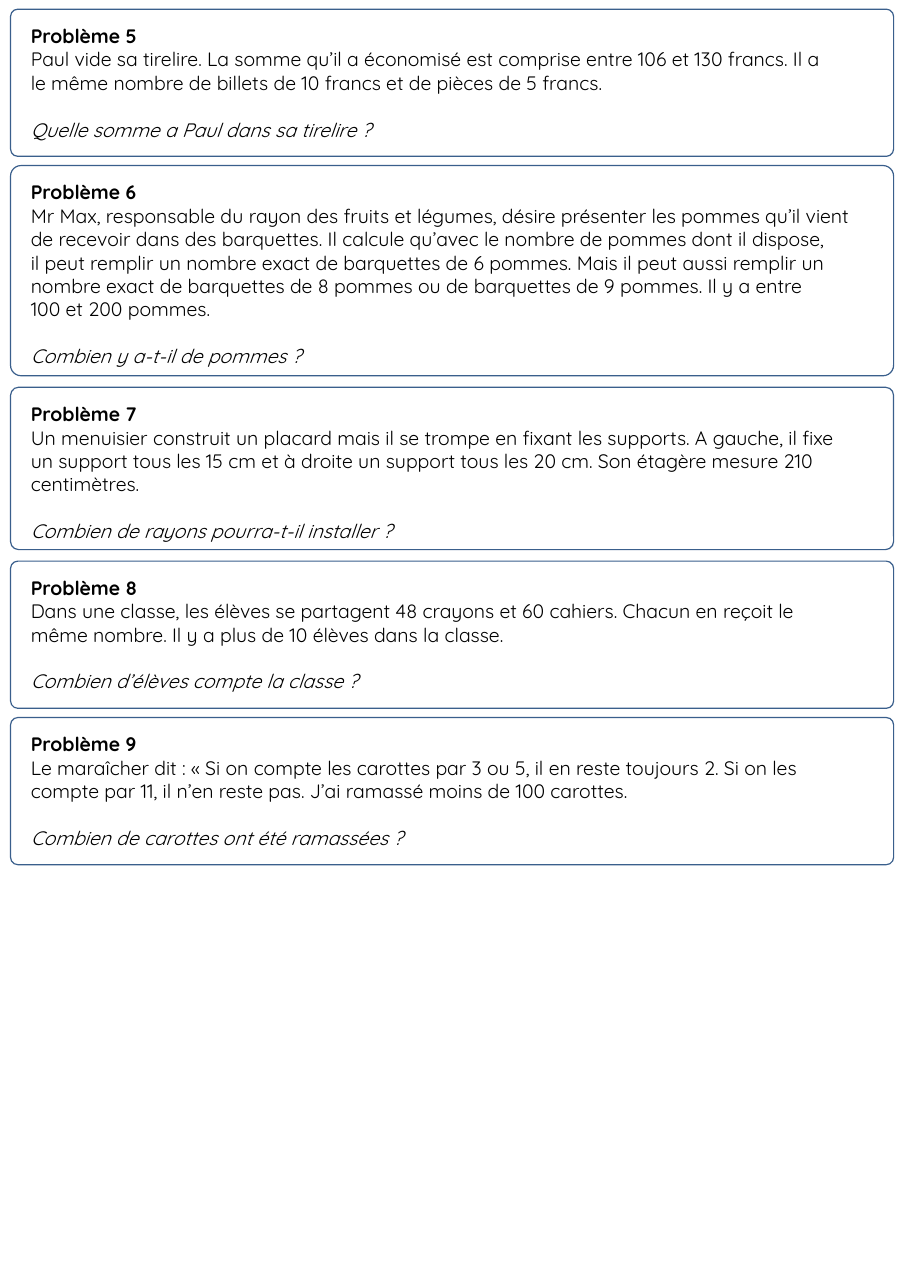
from pptx import Presentation
from pptx.dml.color import RGBColor
from pptx.enum.shapes import MSO_SHAPE as Shape
from pptx.enum.text import PP_ALIGN as Align
from pptx.util import Cm, Pt

# Title, lines of the statement, question, top and height of the frame in cm
PROBLEMS = [
    ("Problème 5", [
        "Paul vide sa tirelire. La somme qu’il a économisé est comprise entre 106 et 130 francs. Il a",
        "le même nombre de billets de 10 francs et de pièces de 5 francs.",
    ], "Quelle somme a Paul dans sa tirelire ?", 0.2, 3.2),
    ("Problème 6", [
        "Mr Max, responsable du rayon des fruits et légumes, désire présenter les pommes qu’il vient",
        "de recevoir dans des barquettes. Il calcule qu’avec le nombre de pommes dont il dispose,",
        "il peut remplir un nombre exact de barquettes de 6 pommes. Mais il peut aussi remplir un",
        "nombre exact de barquettes de 8 pommes ou de barquettes de 9 pommes. Il y a entre",
        "100 et 200 pommes.",
    ], "Combien y a-t-il de pommes ?", 3.6, 4.57),
    ("Problème 7", [
        "Un menuisier construit un placard mais il se trompe en fixant les supports. A gauche, il fixe",
        "un support tous les 15 cm et à droite un support tous les 20 cm. Son étagère mesure 210",
        "centimètres.",
    ], "Combien de rayons pourra-t-il installer ?", 8.42, 3.53),
    ("Problème 8", [
        "Dans une classe, les élèves se partagent 48 crayons et 60 cahiers. Chacun en reçoit le",
        "même nombre. Il y a plus de 10 élèves dans la classe.",
    ], "Combien d’élèves compte la classe ?", 12.2, 3.2),
    ("Problème 9", [
        "Le maraîcher dit : « Si on compte les carottes par 3 ou 5, il en reste toujours 2. Si on les",
        "compte par 11, il n’en reste pas. J’ai ramassé moins de 100 carottes.",
    ], "Combien de carottes ont été ramassées ?", 15.6, 3.2),
]
FONT, BLACK, BLUE = "Quicksand", "000000", "3A5F8C"
FRAME_LEFT, FRAME_WIDTH = 0.23, 19.2
TEXT_LEFT, TEXT_WIDTH, TEXT_OFFSET = 0.42, 18.9, 0.2
LINE_HEIGHT, MARGINS = 0.51, 0.25


def color(value):
    return RGBColor.from_string(value)


def add_frame(slide, top, height):
    frame = slide.shapes.add_shape(
        Shape.ROUNDED_RECTANGLE, Cm(FRAME_LEFT), Cm(top), Cm(FRAME_WIDTH), Cm(height))
    frame.adjustments[0] = 0.05
    frame.shadow.inherit = False
    frame.fill.background()
    frame.line.color.rgb = color(BLUE)
    frame.line.width = Pt(0.75)


def add_text(slide, top, title, statement, question):
    lines = [title, *statement, question]
    height = (len(lines) + 1) * LINE_HEIGHT + MARGINS
    box = slide.shapes.add_textbox(
        Cm(TEXT_LEFT), Cm(top + TEXT_OFFSET), Cm(TEXT_WIDTH), Cm(height))
    text_frame = box.text_frame
    text_frame.word_wrap = True
    for index, line in enumerate(lines):
        paragraph = text_frame.add_paragraph() if index else text_frame.paragraphs[0]
        paragraph.alignment = Align.LEFT
        run = paragraph.add_run()
        run.text = line
        run.font.name = FONT
        run.font.size = Pt(12)
        run.font.color.rgb = color(BLACK)
        run.font.bold = line == title
        run.font.italic = line == question
    paragraph.space_before = Pt(14.4)


def main():
    presentation = Presentation()
    presentation.slide_width, presentation.slide_height = Pt(567), Pt(793.75)
    slide = presentation.slides.add_slide(presentation.slide_layouts[6])
    for title, statement, question, top, height in PROBLEMS:
        add_frame(slide, top, height)
        add_text(slide, top, title, statement, question)
    presentation.save("out.pptx")


if __name__ == "__main__":
    main()
